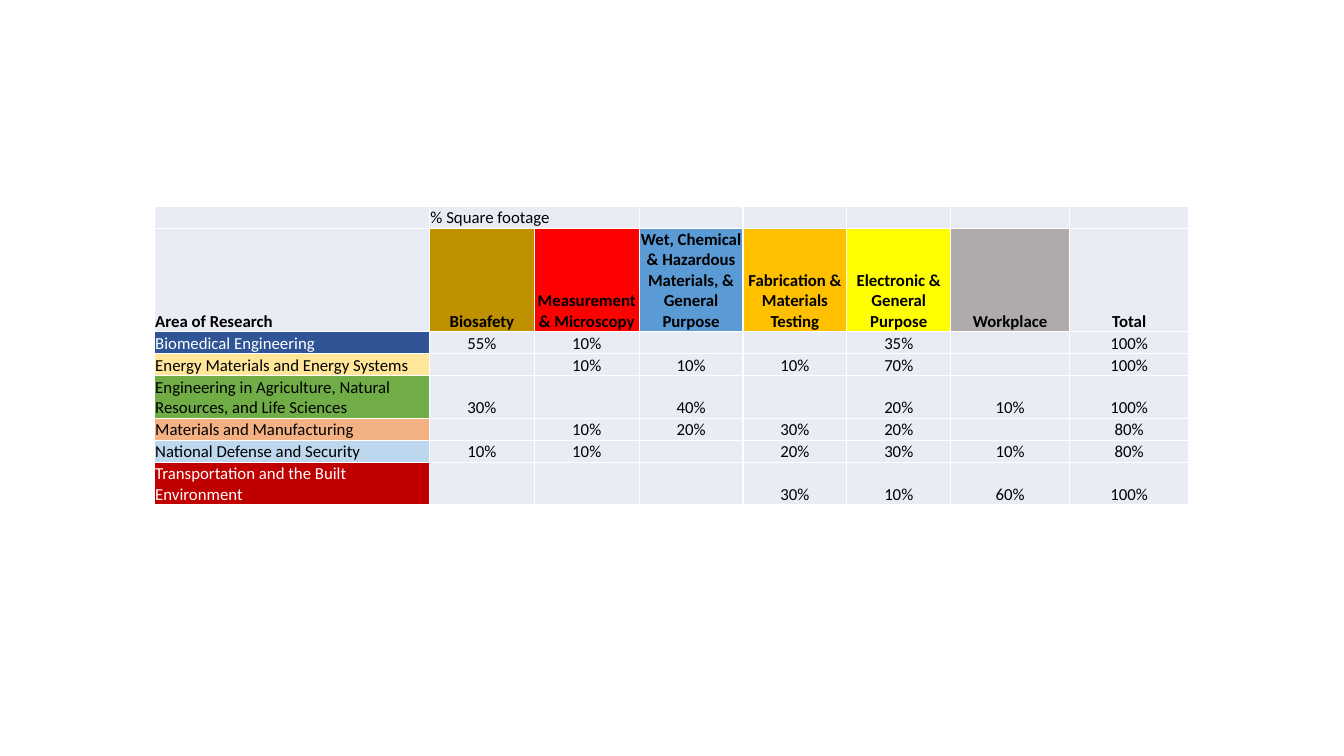
from lxml.etree import SubElement
from pptx import Presentation
from pptx.dml.color import RGBColor
from pptx.enum.text import MSO_ANCHOR as Anchor, PP_ALIGN as Align
from pptx.oxml.ns import qn
from pptx.util import Inches, Pt

PALE = "E9EBF5"
BLACK, WHITE = "000000", "FFFFFF"

COLUMN_WIDTHS = [2.73, 1.04, 1.04, 1.03, 1.03, 1.03, 1.18, 1.18]
ROW_HEIGHTS = [0.21, 1.02, 0.22, 0.22, 0.42, 0.22, 0.22, 0.42]

HEADINGS = [
    ("Area of Research", PALE),
    ("Biosafety", "BF9000"),
    ("Measurement & Microscopy", "FF0000"),
    ("Wet, Chemical & Hazardous Materials, & General Purpose", "5B9BD5"),
    ("Fabrication & Materials Testing", "FFC000"),
    ("Electronic & General Purpose", "FFFF00"),
    ("Workplace", "AFABAB"),
    ("Total", PALE),
]

# Area, fill, text colour, percentage for each lab type
AREAS = [
    ("Biomedical Engineering", "2F5597", WHITE, [55, 10, None, None, 35, None]),
    ("Energy Materials and Energy Systems", "FFE699", BLACK, [None, 10, 10, 10, 70, None]),
    ("Engineering in Agriculture, Natural Resources, and Life Sciences", "70AD47", BLACK,
     [30, None, 40, None, 20, 10]),
    ("Materials and Manufacturing", "F4B183", BLACK, [None, 10, 20, 30, 20, None]),
    ("National Defense and Security", "BDD7EE", BLACK, [10, 10, None, 20, 30, 10]),
    ("Transportation and the Built Environment", "C00000", WHITE,
     [None, None, None, 30, 10, 60]),
]


def color(value):
    return RGBColor.from_string(value)


class SlideBuilder:
    font = "Calibri"
    size = 12
    border = WHITE

    def __init__(self, slide):
        self.slide = slide

    def table(self, left, top, widths, heights):
        frame = self.slide.shapes.add_table(
            len(heights), len(widths), Inches(left), Inches(top),
            Inches(sum(widths)), Inches(sum(heights)))
        table = frame.table
        table.first_row = table.horz_banding = False
        for column, width in zip(table.columns, widths):
            column.width = Inches(width)
        for row, height in zip(table.rows, heights):
            row.height = Inches(height)
        return table

    def borders(self, cell):
        properties = cell._tc.get_or_add_tcPr()
        for side in ("a:lnL", "a:lnR", "a:lnT", "a:lnB"):
            line = SubElement(properties, qn(side), w=str(Pt(1)))
            fill = SubElement(line, qn("a:solidFill"))
            SubElement(fill, qn("a:srgbClr"), val=self.border)

    def cell(self, cell, text="", fill=PALE, text_color=BLACK, bold=False, align=Align.CENTER):
        self.borders(cell)
        cell.fill.solid()
        cell.fill.fore_color.rgb = color(fill)
        cell.margin_left = cell.margin_right = cell.margin_top = Inches(0.01)
        cell.margin_bottom = 0
        cell.vertical_anchor = Anchor.BOTTOM
        cell.text_frame.text = text
        paragraph = cell.text_frame.paragraphs[0]
        paragraph.alignment = align
        for run in paragraph.runs:
            run.font.name = self.font
            run.font.size = Pt(self.size)
            run.font.bold = bold
            run.font.color.rgb = color(text_color)
        # Keeps empty cells from stretching their row
        SubElement(paragraph._p, qn("a:endParaRPr"), sz=str(self.size * 100))


def main():
    presentation = Presentation()
    presentation.slide_width = Inches(13.33)
    presentation.slide_height = Inches(7.5)
    builder = SlideBuilder(presentation.slides.add_slide(presentation.slide_layouts[6]))
    table = builder.table(1.53, 2.05, COLUMN_WIDTHS, ROW_HEIGHTS)

    # Caption row
    for column in range(len(COLUMN_WIDTHS)):
        caption = "% Square footage" if column == 1 else ""
        builder.cell(table.cell(0, column), caption, align=Align.LEFT)
    table.cell(0, 1).merge(table.cell(0, 2))

    # Heading row
    for column, (heading, fill) in enumerate(HEADINGS):
        align = Align.CENTER if column else Align.LEFT
        builder.cell(table.cell(1, column), heading, fill, bold=True, align=align)

    # One row for each area of research
    for row, (area, fill, text_color, shares) in enumerate(AREAS, start=2):
        builder.cell(table.cell(row, 0), area, fill, text_color, align=Align.LEFT)
        total = sum(share or 0 for share in shares)
        for column, share in enumerate(shares + [total], start=1):
            builder.cell(table.cell(row, column), f"{share}%" if share else "")

    presentation.save("out.pptx")


if __name__ == "__main__":
    main()
